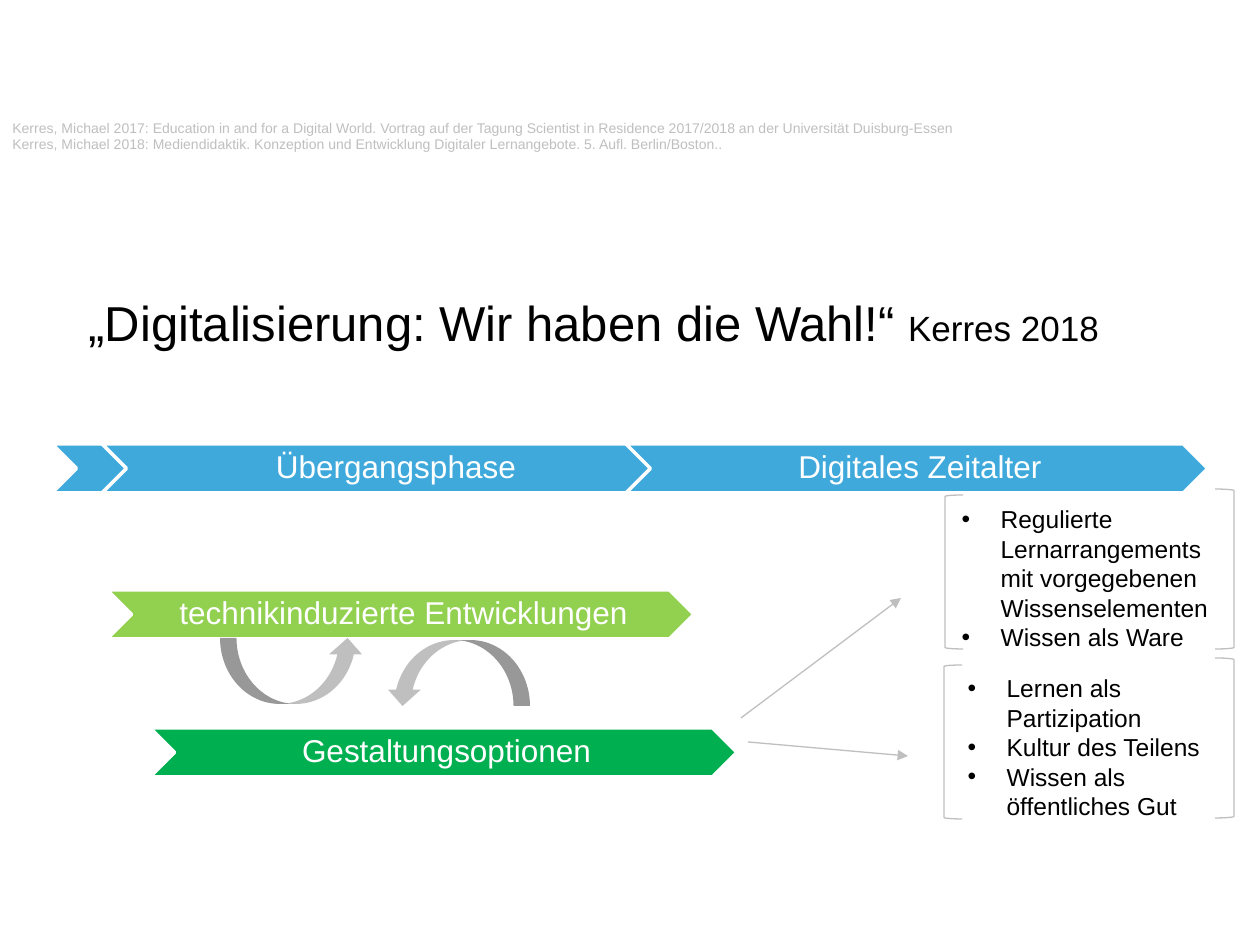
"""Build the slide on digitalisation as a choice, after Kerres 2018."""
from lxml import etree
from pptx import Presentation, util as u
from pptx.dml.color import RGBColor
from pptx.enum import shapes, text
from pptx.oxml.ns import qn

COLORS = {"black": "000000", "white": "FFFFFF", "grey": "BFBFBF",
          "blue": "3FA9DC", "lime": "92D050", "green": "00B050"}
FONT = "Arial"
SLIDE = (1260, 945)

TITLE = [("„Digitalisierung: Wir haben die Wahl!“ ", 28), ("Kerres 2018", 20)]
TITLE_BOX = (76, 286, 1149, 72)
SOURCES = [
    "Kerres, Michael 2017: Education in and for a Digital World. Vortrag auf der Tagung "
    "Scientist in Residence 2017/2018 an der Universität Duisburg-Essen",
    "Kerres, Michael 2018: Mediendidaktik. Konzeption und Entwicklung Digitaler "
    "Lernangebote. 5. Aufl. Berlin/Boston..",
]
SOURCES_BOX = (0, 113, 1260, 47)
OUTCOMES = [
    ((949, 498), ["Regulierte Lernarrangements mit vorgegebenen Wissenselementen",
                  "Wissen als Ware"]),
    ((955, 667), ["Lernen als Partizipation", "Kultur des Teilens",
                  "Wissen als öffentliches Gut"]),
]
LIST_SIZE = (278, 161)
HANGING = 39
CHEVRON_HEIGHT = 49
CHEVRONS = [
    ("technikinduzierte Entwicklungen", 107, 590, 587, "lime"),
    ("", 52, 444, 108, "blue"),
    ("Übergangsphase", 102, 444, 582, "blue"),
    ("Digitales Zeitalter", 626, 444, 582, "blue"),
    ("Gestaltungsoptionen", 150, 728, 587, "green"),
]
CYCLE_ARROWS = [((220, 638, 144, 66), 0), ((386, 640, 144, 66), 180)]
BRACKETS = [
    (shapes.MSO_SHAPE.LEFT_BRACKET, (945, 495, 18, 154)),
    (shapes.MSO_SHAPE.RIGHT_BRACKET, (1215, 489, 19, 160)),
    (shapes.MSO_SHAPE.LEFT_BRACKET, (944, 665, 18, 154)),
    (shapes.MSO_SHAPE.RIGHT_BRACKET, (1215, 658, 19, 160)),
]
PATHS = [(741, 718, 901, 598), (748, 742, 908, 756)]


def px(n):
    return u.Emu(round(n * 914400 / 126))


def rgb(name):
    return RGBColor.from_string(COLORS[name])


def add_run(p, words, size, color):
    r = p.add_run()
    r.text = words
    r.font.name, r.font.size = FONT, u.Pt(size)
    r.font.color.rgb = rgb(color)


def paragraphs(tf, count):
    return [tf.paragraphs[0]] + [tf.add_paragraph() for _ in range(count - 1)]


def place(sp, box):
    sp.left, sp.top, sp.width, sp.height = map(px, box)
    tf = sp.text_frame
    tf.word_wrap = True
    tf.auto_size = text.MSO_AUTO_SIZE.NONE
    tf.vertical_anchor = text.MSO_ANCHOR.TOP
    return tf


def add_bullet(p):
    pPr = p._p.get_or_add_pPr()
    pPr.set("marL", str(px(HANGING)))
    pPr.set("indent", str(-px(HANGING)))
    color = etree.SubElement(pPr, qn("a:buClr"))
    etree.SubElement(color, qn("a:srgbClr"), val=COLORS["black"])
    etree.SubElement(pPr, qn("a:buFont"), typeface=FONT)
    etree.SubElement(pPr, qn("a:buChar"), char="•")


def fill_list(sp, corner, items):
    tf = place(sp, corner + LIST_SIZE)
    for p, item in zip(paragraphs(tf, len(items)), items):
        p.space_before = u.Pt(0)
        add_bullet(p)
        add_run(p, item, 14, "black")


def add_shape(s, kind, box, fill=None, line=None, width=0.75):
    sp = s.shapes.add_shape(kind, *map(px, box))
    sp.shadow.inherit = False
    for part, color in ((sp.fill, fill), (sp.line.fill, line)):
        if color:
            part.solid()
            part.fore_color.rgb = rgb(color)
        else:
            part.background()
    if line:
        sp.line.width = u.Pt(width)
    return sp


def add_chevron(s, words, x, y, w, color):
    sp = add_shape(s, shapes.MSO_SHAPE.CHEVRON, (x, y, w, CHEVRON_HEIGHT), color, "white", 2)
    if not words:
        return
    tf = sp.text_frame
    tf.word_wrap = True
    tf.vertical_anchor = text.MSO_ANCHOR.MIDDLE
    tf.margin_left = px(10)
    tf.margin_top = tf.margin_right = tf.margin_bottom = px(4)
    p = tf.paragraphs[0]
    p.alignment = text.PP_ALIGN.CENTER
    p.line_spacing = 0.9
    add_run(p, words, 18, "white")


def add_path(s, ends):
    line = s.shapes.add_connector(shapes.MSO_CONNECTOR.STRAIGHT, *map(px, ends))
    line.line.color.rgb = rgb("grey")
    line.line.width = u.Pt(0.75)
    etree.SubElement(line.line._get_or_add_ln(), qn("a:tailEnd"), type="triangle")
    etree.SubElement(line._element.spPr, qn("a:effectLst"))


def main():
    prs = Presentation()
    prs.slide_width, prs.slide_height = map(px, SLIDE)
    s = prs.slides.add_slide(prs.slide_layouts.get_by_name("Two Content"))
    title, *bodies = list(s.placeholders)[:3]

    p = place(title, TITLE_BOX).paragraphs[0]
    p.alignment = text.PP_ALIGN.LEFT
    for words, size in TITLE:
        add_run(p, words, size, "black")
    for body, (corner, items) in zip(bodies, OUTCOMES):
        fill_list(body, corner, items)

    for chevron in CHEVRONS:
        add_chevron(s, *chevron)
    for box, angle in CYCLE_ARROWS:
        sp = add_shape(s, shapes.MSO_SHAPE.CURVED_UP_ARROW, box, fill="grey")
        sp.rotation = angle
    for kind, box in BRACKETS:
        add_shape(s, kind, box, line="grey")
    for ends in PATHS:
        add_path(s, ends)

    tf = place(s.shapes.add_textbox(0, 0, 0, 0), SOURCES_BOX)
    for p, source in zip(paragraphs(tf, len(SOURCES)), SOURCES):
        add_run(p, source, 8, "grey")
    prs.save("out.pptx")


if __name__ == "__main__":
    main()
